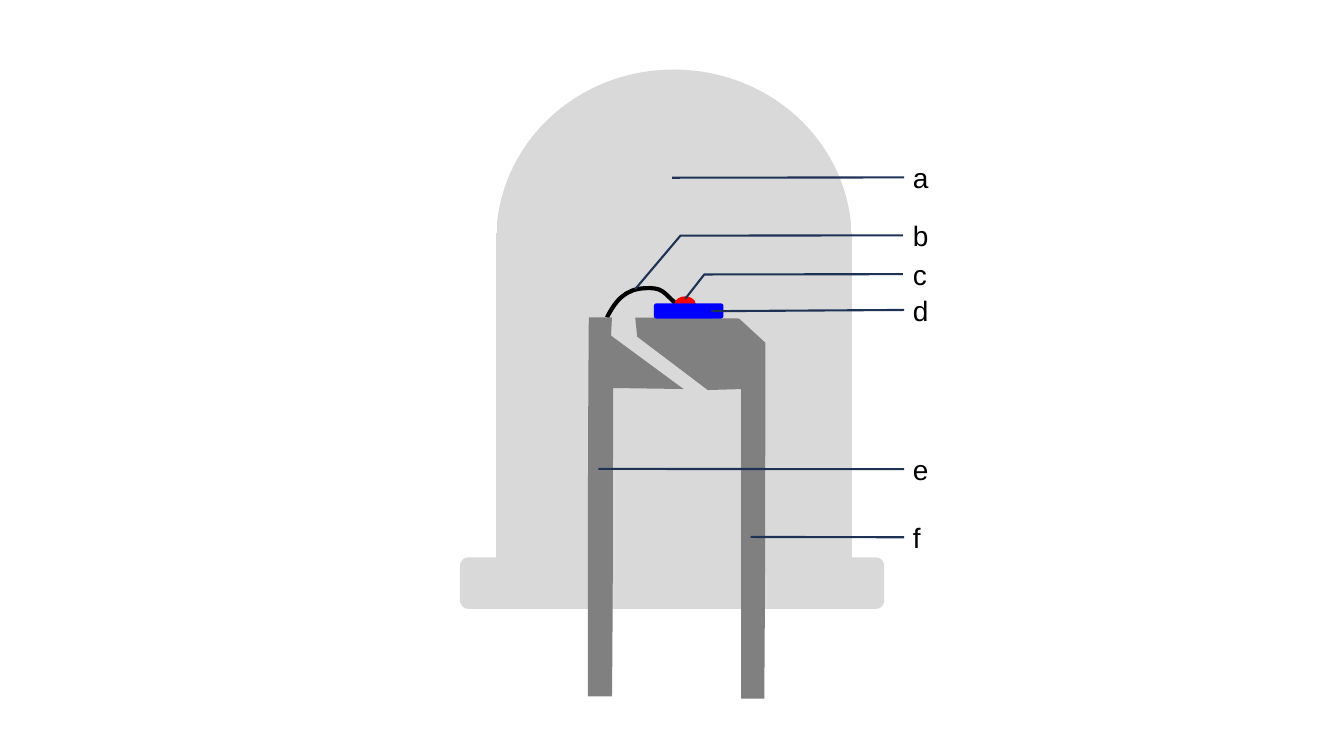
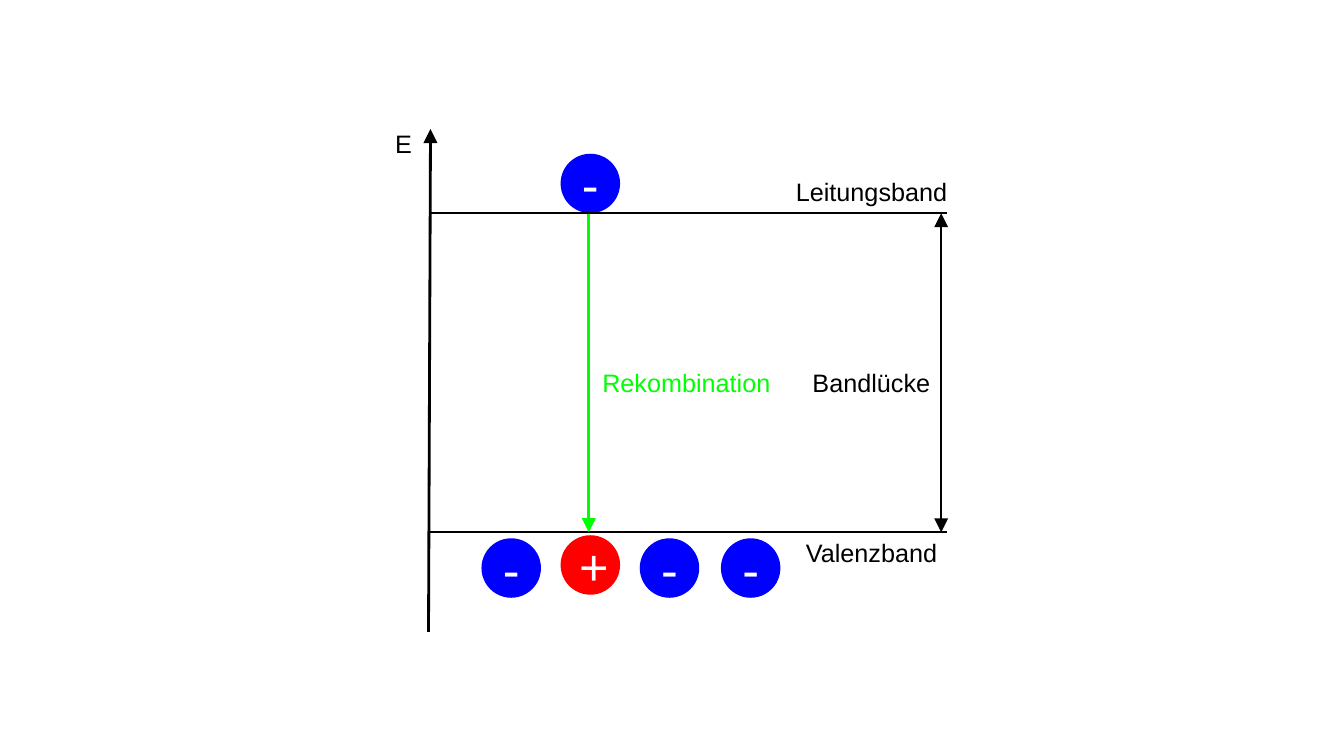
"""Build two slides: the parts of an LED and the band model of recombination."""
from dataclasses import dataclass

from lxml.etree import SubElement
from pptx import Presentation
from pptx.dml.color import RGBColor
from pptx.enum.shapes import MSO_CONNECTOR, MSO_SHAPE as Preset
from pptx.enum.text import MSO_AUTO_SIZE as AutoSize, PP_ALIGN as Align
from pptx.oxml.ns import qn
from pptx.util import Inches, Pt


@dataclass(frozen=True)
class Theme:
    font: str = "Arial"
    black: str = "000000"
    white: str = "FFFFFF"
    blue: str = "0000FF"
    red: str = "FF0000"
    green: str = "00FF00"
    lens: str = "D9D9D9"
    lead: str = "808080"
    leader: str = "1E3256"
    band_size: int = 18
    part_size: int = 20
    charge_size: int = 36
    thin: float = 1.5
    medium: float = 2
    thick: float = 3


theme = Theme()
presentation = Presentation()
presentation.slide_width, presentation.slide_height = Inches(13.33), Inches(7.5)
GRID_ROWS = 75
cell = presentation.slide_height / GRID_ROWS
blank = presentation.slide_layouts[6]


def paint(shape, fill=None, line=None, width=theme.thin):
    shape.shadow.inherit = False
    if fill:
        shape.fill.solid()
        shape.fill.fore_color.rgb = RGBColor.from_string(fill)
    else:
        shape.fill.background()
    if line:
        shape.line.color.rgb = RGBColor.from_string(line)
        shape.line.width = Pt(width)
    else:
        shape.line.fill.background()


def write(shape, text, size, color, alignment=Align.LEFT):
    shape.text_frame.text = text
    paragraph = shape.text_frame.paragraphs[0]
    paragraph.alignment = alignment
    font = paragraph.runs[0].font
    font.name, font.size = theme.font, Pt(size)
    font.color.rgb = RGBColor.from_string(color)


slide = presentation.slides.add_slide(blank)

lens = [
    [(66.8, 6.9)],
    [(76, 6.9), (83.5, 13.5), (84.4, 22.1)],
    [(84.4, 23.1)], [(84.5, 23.1)], [(84.5, 23.8)], [(84.5, 55.3)], [(86.9, 55.3)],
    [(87.4, 55.3), (87.7, 55.7), (87.7, 56.2)],
    [(87.7, 59.5)],
    [(87.7, 60), (87.4, 60.4), (86.9, 60.4)],
    [(46.4, 60.4)],
    [(46, 60.4), (45.6, 60), (45.6, 59.5)],
    [(45.6, 56.2)],
    [(45.6, 55.7), (46, 55.3), (46.4, 55.3)],
    [(49.2, 55.3)], [(49.2, 23.8)], [(49.2, 23.1)], [(49.3, 23.1)], [(49.3, 22.1)],
    [(50.2, 13.5), (57.7, 6.9), (66.8, 6.9)],
]
right_lead = [
    [(63, 31.5)], [(73.3, 31.6)], [(75.9, 34)],
    [(75.9, 45.8), (75.9, 57.6), (75.8, 69.3)],
    [(73.5, 69.3)], [(73.5, 38.6)], [(70.2, 38.7)], [(63.2, 33.4)], [(63, 31.5)],
]
wire = [
    [(60.2, 31.5)],
    [(61.1, 29.7), (62.1, 28.7), (63.9, 28.6)],
    [(65.7, 28.5), (65.7, 28.9), (67.1, 30.2)],
]
left_lead = [
    [(58.4, 31.5)], [(60.7, 31.5)], [(60.6, 33.3)], [(67.8, 38.6)], [(60.8, 38.5)],
    [(60.8, 48.7), (60.8, 58.9), (60.7, 69.1)],
    [(58.3, 69.1)],
    [(58.3, 56.5), (58.3, 43.9), (58.4, 31.5)],
]

outlines = [
    (lens, theme.lens, None),
    (right_lead, theme.lead, None),
    (wire, None, theme.black),
    (left_lead, theme.lead, None),
]
for segments, fill, line in outlines:
    points = [(x * cell, y * cell) for segment in segments for x, y in segment]
    builder = slide.shapes.build_freeform(*points[0], scale=1.0)
    builder.add_line_segments(points[1:], close=fill is not None)
    outline = builder.convert_to_shape()
    paint(outline, fill, line, theme.thick)
    steps = iter(list(outline._element.iter(qn("a:lnTo"))))
    for segment in segments[1:]:
        first, *others = [next(steps) for point in segment]
        if others:
            first.tag = qn("a:cubicBezTo")
            for step in others:
                first.append(step[0])
                step.getparent().remove(step)

chip_parts = [
    (Preset.OVAL, 66.85, 29.4, 2.2, 1.8, theme.red),
    (Preset.ROUNDED_RECTANGLE, 64.85, 30.1, 6.9, 1.5, theme.blue),
]
for preset, left, top, width, height, fill in chip_parts:
    paint(slide.shapes.add_shape(preset, *(int(v * cell) for v in (left, top, width, height))), fill)

LABEL_LEFT, LABEL_WIDTH, LABEL_HEIGHT = 89.55, 11.8, 3.1
part_labels = [
    ("a", 16.05, [(0.51, -1.94)]),
    ("d", 29.2, [(0.54, -1.61)]),
    ("f", 51.75, [(0.49, -1.28)]),
    ("e", 45, [(0.49, -2.56)]),
    ("b", 21.8, [(0.51, -1.87), (2.22, -2.25)]),
    ("c", 25.65, [(0.51, -1.67), (1.29, -1.83)]),
]
callouts = {1: Preset.LINE_CALLOUT_1_NO_BORDER, 2: Preset.LINE_CALLOUT_2_NO_BORDER}
for text, top, bends in part_labels:
    box = (int(v * cell) for v in (LABEL_LEFT, top, LABEL_WIDTH, LABEL_HEIGHT))
    label = slide.shapes.add_shape(callouts[len(bends)], *box)
    leader = [0.5, 0.01 if len(bends) == 1 else 0] + [share for bend in bends for share in bend]
    for index, share in enumerate(leader):
        label.adjustments[index] = share
    paint(label, line=theme.leader)
    write(label, text, theme.part_size, theme.black)

slide = presentation.slides.add_slide(blank)

AXIS, RIGHT_END, GAP_ARROW, RECOMBINATION = 42.5, 93.95, 93.35, 58.4
CONDUCTION, VALENCE = 21.15, 52.8
DIAMETER = 5.9

charges = [
    ("-", 55.6, 15.25, theme.blue),
    ("-", 47.75, 53.4, theme.blue),
    ("-", 63.45, 53.4, theme.blue),
    ("-", 71.5, 53.4, theme.blue),
    ("+", 55.6, 53.1, theme.red),
]
for sign, left, top, fill in charges:
    box = (int(v * cell) for v in (left, top, DIAMETER, DIAMETER))
    charge = slide.shapes.add_shape(Preset.OVAL, *box)
    paint(charge, fill)
    write(charge, sign, theme.charge_size, theme.white, Align.CENTER)

lines = [
    (AXIS, 62.7, AXIS + 0.2, 12.8, theme.black, theme.medium, ["tailEnd"]),
    (AXIS, VALENCE, RIGHT_END, VALENCE, theme.black, theme.thin, []),
    (GAP_ARROW, CONDUCTION, GAP_ARROW, VALENCE, theme.black, theme.thin, ["headEnd", "tailEnd"]),
    (RECOMBINATION, CONDUCTION, RECOMBINATION, VALENCE, theme.green, theme.medium, ["tailEnd"]),
    (AXIS, CONDUCTION, RIGHT_END, CONDUCTION, theme.black, theme.thin, []),
]
for *ends, color, width, arrowheads in lines:
    connector = slide.shapes.add_connector(MSO_CONNECTOR.STRAIGHT, *(int(v * cell) for v in ends))
    connector.line.color.rgb = RGBColor.from_string(color)
    connector.line.width = Pt(width)
    properties = connector._element.spPr
    for arrowhead in arrowheads:
        SubElement(properties.find(qn("a:ln")), qn(f"a:{arrowhead}"), type="triangle", w="lg", len="lg")
    SubElement(properties, qn("a:effectLst"))

TEXT_HEIGHT = 4
band_labels = [
    ("E", 38.2, 12.25, 3.7, theme.black),
    ("Leitungsband", 77.95, 17, 17.2, theme.black),
    ("Bandlücke", 79.6, 35.9, 13.8, theme.black),
    ("Valenzband", 78.95, VALENCE, 15.2, theme.black),
    ("Rekombination", 58.75, 35.9, 18.8, theme.green),
]
for text, left, top, width, color in band_labels:
    label = slide.shapes.add_textbox(*(int(v * cell) for v in (left, top, width, TEXT_HEIGHT)))
    label.text_frame.word_wrap = False
    label.text_frame.auto_size = AutoSize.SHAPE_TO_FIT_TEXT
    write(label, text, theme.band_size, color)

presentation.save("out.pptx")
